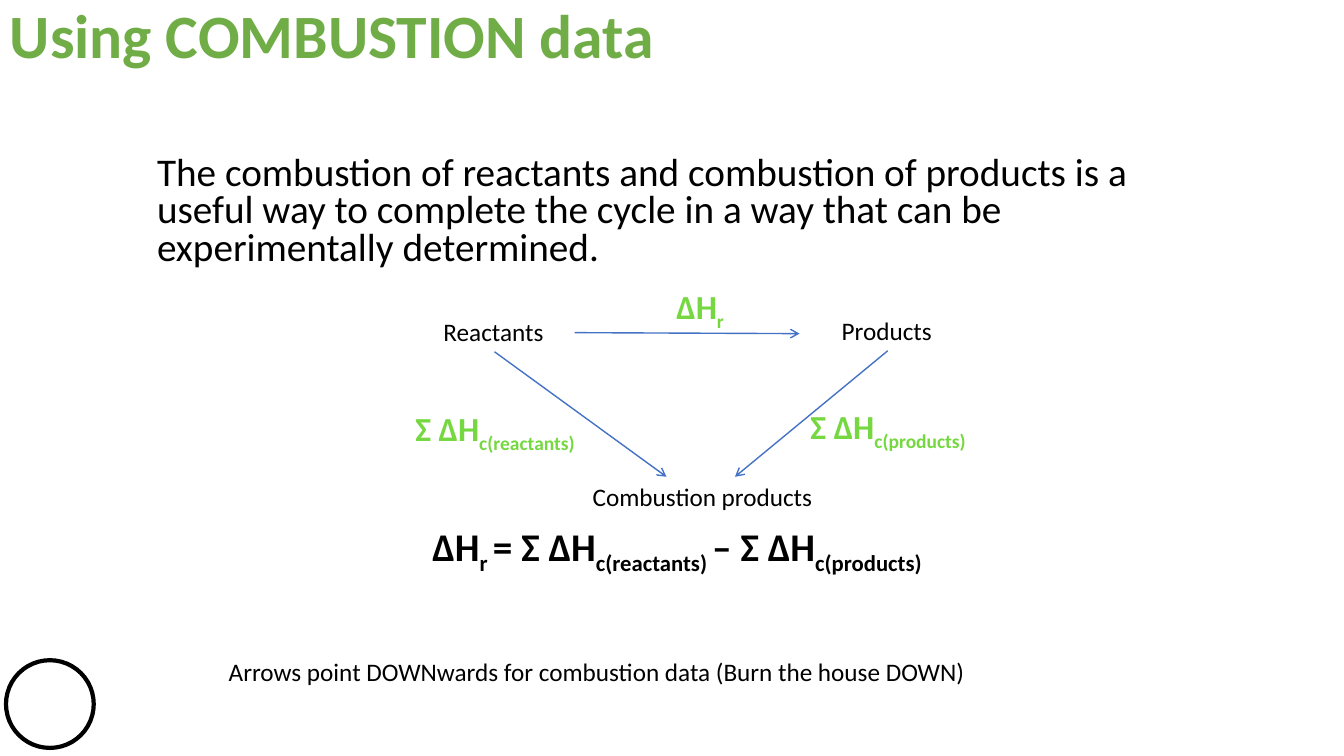
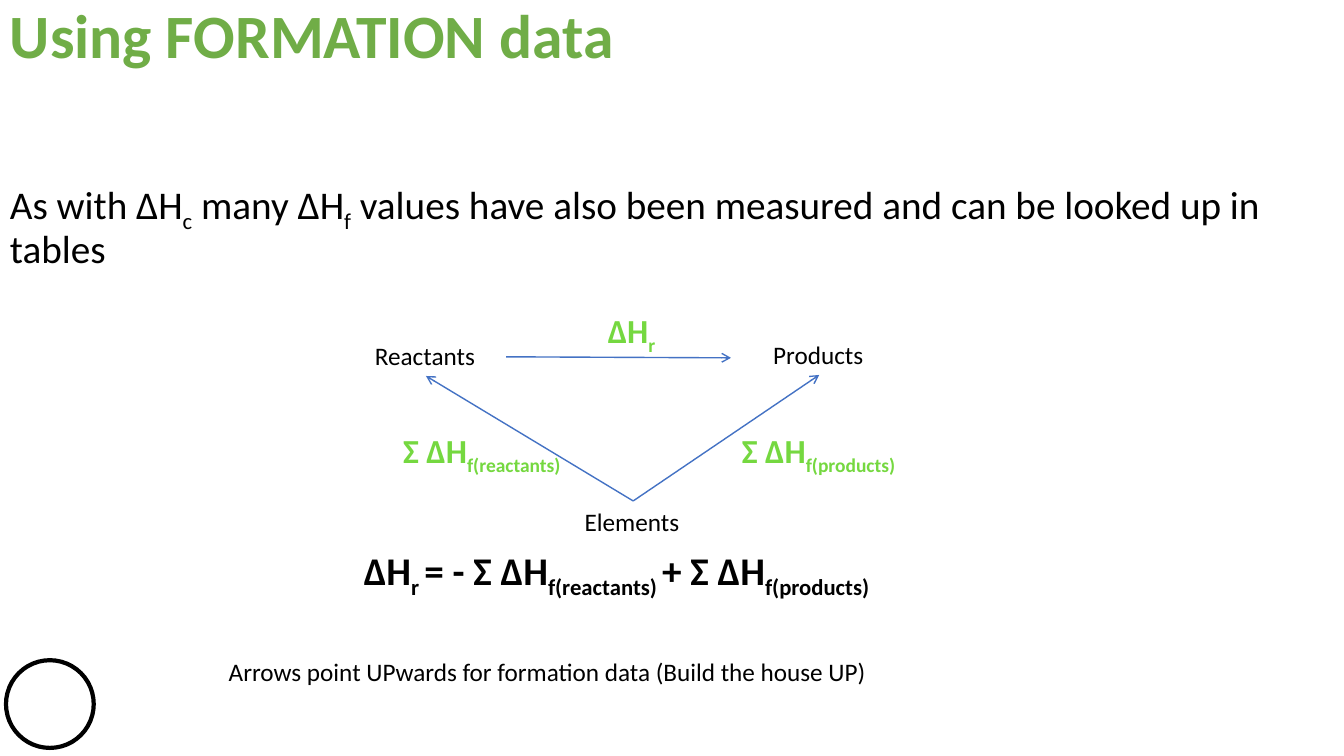
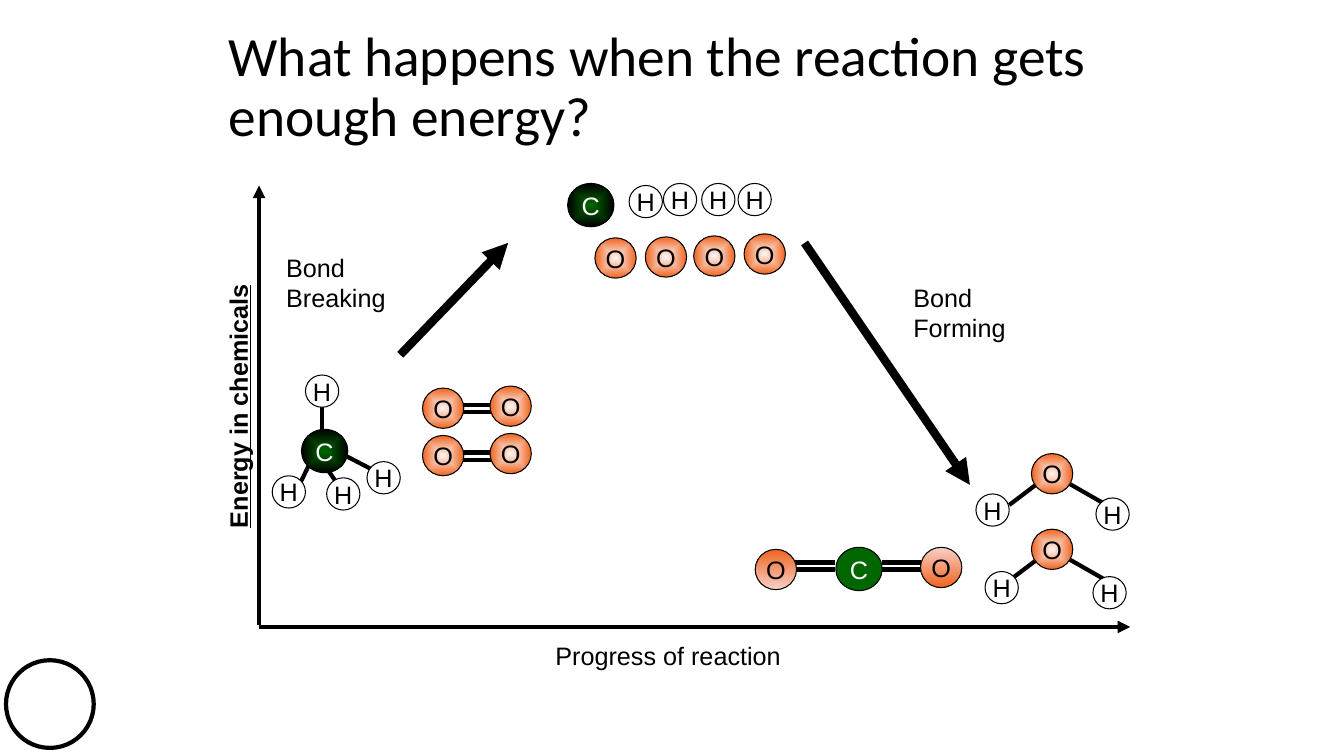
import pptx
import pptx.dml.color
import pptx.enum.shapes
import pptx.enum.text
import pptx.oxml.ns
import pptx.util
from lxml import etree
from pptx.util import Inches

BLACK, WHITE, BLUE = "000000", "FFFFFF", "4472C4"
TITLE_GREEN, LABEL_GREEN, CARBON_GREEN = "70AD47", "75D840", "006600"
ORANGE, PALE, PINK = "EF641F", "FDF5F3", "F8D0C9"

CYCLES = [
    {
        "title": "Using COMBUSTION data",
        "body": "The combustion of reactants and combustion of products is a useful way to complete "
                "the cycle in a way that can be experimentally determined.",
        "body_box": (1.46, 1.5, 10.42, 1.29),
        "body_spacing": 0.8,
        "origin": (4.3, 3.09),
        "base": ("Combustion products", 1.48, 2.41),
        "reactants_sum": ("Σ ΔH|c(reactants)", -0.28, 0.91, 1.95),
        "products_sum": "Σ ΔH|c(products)",
        "equation": "ΔH|r |= Σ ΔH|c(reactants) |– Σ ΔH|c(products)",
        "equation_width": 5.59,
        "base_ends": (2.31, 2.99),
        "upwards": False,
        "hint": "Arrows point DOWNwards for combustion data (Burn the house DOWN)",
    },
    {
        "title": "Using FORMATION data",
        "body": "As with ΔH|c| many ΔH|f| values have also been measured and can be looked up in tables",
        "body_box": (0, 1.75, 13.43, 1.29),
        "body_spacing": 0.9,
        "origin": (3.62, 3.33),
        "base": ("Elements", 2.08, 1.16),
        "reactants_sum": ("Σ ΔH|f(reactants)", 0.28, 0.89, 1.96),
        "products_sum": "Σ ΔH|f(products)",
        "equation": "ΔH|r |= - Σ ΔH|f(reactants) |+ Σ ΔH|f(products)",
        "equation_width": 5.83,
        "base_ends": (2.66, 2.66),
        "upwards": True,
        "hint": "Arrows point UPwards for formation data (Build the house UP)",
    },
]

ENERGY_TITLE = "What happens when the reaction gets enough energy?"
ENERGY_LABELS = [
    ("Bond\nForming", (8.96, 2.75, 1.13, 0.71)),
    ("Bond\nBreaking", (2.74, 2.45, 1.2, 0.71)),
    ("Progress of reaction", (5.41, 6.3, 2.46, 0.4)),
]
ENERGY_ARROWS = [
    ((7.98, 2.41), (9.62, 4.81), 6),
    ((3.97, 3.52), (5.04, 2.41), 6),
    ((2.57, 6.2), (2.57, 1.84), 3),
    ((2.57, 6.22), (11.21, 6.22), 3),
]
OXYGEN_ROWS = (0, 0.47)
WATER_ROWS = (0, 0.75)
DOUBLE_BOND_GAP = 0.07
DOUBLE_BONDS = [(4.57, 4.95, 4.02 + row) for row in OXYGEN_ROWS] + [(7.89, 8.28, 5.58), (8.75, 9.13, 5.58)]
METHANE_BONDS = [
    ((3.19, 4.3), (3.19, 3.97)),
    ((3.09, 4.56), (2.97, 4.81)),
    ((3.19, 4.57), (3.4, 4.88)),
    ((3.29, 4.45), (3.81, 4.72)),
]
WATER_BONDS = [((10.01, 5.01), (10.3, 4.79)), ((10.59, 4.79), (10.94, 4.99))]
ATOM_STYLES = {
    "H": (0.33, 0.32, BLACK),
    "O": (0.41, 0.4, BLACK),
    "C": (0.46, 0.43, WHITE),
}
HYDROGENS = [
    (3.03, 3.72), (3.64, 4.58), (3.24, 4.74), (2.7, 4.72),
    (6.24, 1.84), (6.58, 1.82), (6.96, 1.82), (7.32, 1.82),
    (9.68, 4.9), (10.87, 4.94), (9.77, 5.67), (10.84, 5.72),
]
OXYGENS = [(5.9, 2.36), (6.4, 2.35), (6.88, 2.34), (7.38, 2.32)]
OXYGENS += [(left, top + row) for row in OXYGEN_ROWS for left, top in ((4.86, 3.83), (4.19, 3.85))]
OXYGENS += [(10.23, 4.5 + row) for row in WATER_ROWS]
CARBONS = [(2.99, 4.26), (5.63, 1.82)]
CARBON_DIOXIDE = [
    ("O", (7.49, 5.45), (ORANGE, PINK)),
    ("C", (8.29, 5.43), (CARBON_GREEN,)),
    ("O", (9.13, 5.43), (PINK, ORANGE)),
]


def rgb(value):
    return pptx.dml.color.RGBColor.from_string(value)


def write(frame, text, size, font="Calibri", color=BLACK, bold=None, spacing=None, centred=False):
    for index, line in enumerate(text.split("\n")):
        paragraph = frame.add_paragraph() if index else frame.paragraphs[0]
        for position, part in enumerate(line.split("|")):
            run = paragraph.add_run()
            run.text = part
            if position % 2:
                run._r.get_or_add_rPr().set("baseline", "-25000")
        if centred:
            paragraph.alignment = pptx.enum.text.PP_ALIGN.CENTER
        if spacing:
            paragraph.line_spacing = spacing
        paragraph.font.name = font
        paragraph.font.size = pptx.util.Pt(size)
        paragraph.font.bold = bold
        paragraph.font.color.rgb = rgb(color)


def add_text(slide, text, box, size=18, wrap=False, **style):
    shape = slide.shapes.add_textbox(*map(Inches, box))
    frame = shape.text_frame
    frame.word_wrap = wrap
    if not wrap:
        frame.auto_size = pptx.enum.text.MSO_AUTO_SIZE.SHAPE_TO_FIT_TEXT
    write(frame, text, size, **style)
    return shape


def add_line(slide, start, end, color=BLACK, width=3, head=None):
    line = slide.shapes.add_connector(
        pptx.enum.shapes.MSO_CONNECTOR.STRAIGHT, *map(Inches, (*start, *end)))
    line.line.color.rgb = rgb(color)
    line.line.width = pptx.util.Pt(width)
    qn = pptx.oxml.ns.qn
    properties = line._element.spPr
    if head:
        etree.SubElement(properties.find(qn("a:ln")), qn("a:tailEnd"), type=head)
    etree.SubElement(properties, qn("a:effectLst"))
    return line


def add_ellipse(slide, box, line_width):
    shape = slide.shapes.add_shape(pptx.enum.shapes.MSO_SHAPE.OVAL, *map(Inches, box))
    shape.shadow.inherit = False
    shape.fill.solid()
    shape.fill.fore_color.rgb = rgb(WHITE)
    shape.line.color.rgb = rgb(BLACK)
    shape.line.width = pptx.util.Pt(line_width)
    return shape


def fill_gradient(shape, colors, radial):
    fill = shape.fill
    fill.gradient()
    for stop, color, position in zip(fill.gradient_stops, colors, (0, 1)):
        stop.color.rgb = rgb(color)
        stop.position = position
    fill.gradient_angle = 270
    if radial:
        qn = pptx.oxml.ns.qn
        gradient = shape._element.spPr.find(qn("a:gradFill"))
        gradient.remove(gradient.find(qn("a:lin")))
        outline = etree.SubElement(gradient, qn("a:path"), {"path": "shape"})
        etree.SubElement(outline, qn("a:fillToRect"), dict.fromkeys("ltrb", "50000"))


def add_atom(slide, symbol, corner, colors, radial=False):
    width, height, text_color = ATOM_STYLES[symbol]
    shape = add_ellipse(slide, (*corner, width, height), 0.75)
    if len(colors) == 2:
        fill_gradient(shape, colors, radial)
    else:
        shape.fill.fore_color.rgb = rgb(colors[0])
    frame = shape.text_frame
    frame.word_wrap = False
    frame.margin_left = frame.margin_right = frame.margin_top = frame.margin_bottom = 0
    frame.vertical_anchor = pptx.enum.text.MSO_ANCHOR.MIDDLE
    write(frame, symbol, 18, font="Arial", color=text_color, centred=True)


def new_slide(presentation):
    slide = presentation.slides.add_slide(presentation.slide_layouts[6])
    add_ellipse(slide, (0.06, 6.55, 0.87, 0.87), 3)
    return slide


def build_cycle(presentation, cycle):
    slide = new_slide(presentation)
    left, top = cycle["origin"]

    def at(x, y):
        return left + x, top + y

    def add_green(text, x, y, width):
        add_text(slide, text, (*at(x, y), width, 0.5), 24, color=LABEL_GREEN, bold=True)

    add_text(slide, cycle["title"], (0, 0, 12.42, 1.45), 44, wrap=True,
             color=TITLE_GREEN, bold=True, spacing=0.9)
    add_text(slide, cycle["body"], cycle["body_box"], 28, wrap=True, spacing=cycle["body_spacing"])
    add_text(slide, cycle["hint"], (2.17, 6.46, 8.21, 0.4), wrap=True)
    add_text(slide, cycle["equation"], (*at(-0.11, 2.04), cycle["equation_width"], 0.57), 28, bold=True)

    reactants = add_text(slide, "Reactants", (*at(0, 0), 1.21, 0.4))
    products = add_text(slide, "Products", (*at(3.95, -0.01), 1.11, 0.4))
    base_text, base_x, base_width = cycle["base"]
    base = add_text(slide, base_text, (*at(base_x, 1.64), base_width, 0.4))

    add_line(slide, at(1.4, 0.21), at(3.63, 0.22), BLUE, 1, "arrow")
    for compound, compound_x, base_end in zip((reactants, products), (0.6, 4.5), cycle["base_ends"]):
        upper, lower = at(compound_x, 0.4), at(base_end, 1.64)
        if cycle["upwards"]:
            arrow = add_line(slide, lower, upper, BLUE, 1, "arrow")
            arrow.begin_connect(base, 0)
            arrow.end_connect(compound, 2)
        else:
            arrow = add_line(slide, upper, lower, BLUE, 1, "arrow")
            arrow.begin_connect(compound, 2)

    add_green("ΔH|r", 2.31, -0.3, 0.69)
    add_green(*cycle["reactants_sum"])
    add_green(cycle["products_sum"], 3.64, 0.89, 1.9)


def build_energy(presentation):
    slide = new_slide(presentation)
    title = add_text(slide, ENERGY_TITLE, (2.17, 0.2, 9, 1.35), 39.6, wrap=True, spacing=0.9)
    title.text_frame.vertical_anchor = pptx.enum.text.MSO_ANCHOR.MIDDLE
    for text, box in ENERGY_LABELS:
        add_text(slide, text, box, font="Arial")
    axis = add_text(slide, "Energy in chemicals", (1.04, 3.83, 2.64, 0.4),
                    font="Arial", bold=True, centred=True)
    axis.rotation = 270
    axis.text_frame.vertical_anchor = pptx.enum.text.MSO_ANCHOR.MIDDLE
    axis.text_frame.paragraphs[0].font.underline = True

    for start, end, width in ENERGY_ARROWS:
        add_line(slide, start, end, width=width, head="triangle")
    for left, right, top in DOUBLE_BONDS:
        for y in (top, top + DOUBLE_BOND_GAP):
            add_line(slide, (left, y), (right, y))
    for start, end in METHANE_BONDS:
        add_line(slide, start, end)
    for row in WATER_ROWS:
        for (x1, y1), (x2, y2) in WATER_BONDS:
            add_line(slide, (x1, y1 + row), (x2, y2 + row))

    for symbol, corners, colors in (
        ("H", HYDROGENS, (WHITE,)),
        ("O", OXYGENS, (PALE, ORANGE)),
        ("C", CARBONS, (CARBON_GREEN, BLACK)),
    ):
        for corner in corners:
            add_atom(slide, symbol, corner, colors, radial=True)
    for symbol, corner, colors in CARBON_DIOXIDE:
        add_atom(slide, symbol, corner, colors)


def main():
    presentation = pptx.Presentation()
    presentation.slide_width = Inches(13.33)
    presentation.slide_height = Inches(7.5)
    for cycle in CYCLES:
        build_cycle(presentation, cycle)
    build_energy(presentation)
    presentation.save("out.pptx")


if __name__ == "__main__":
    main()
